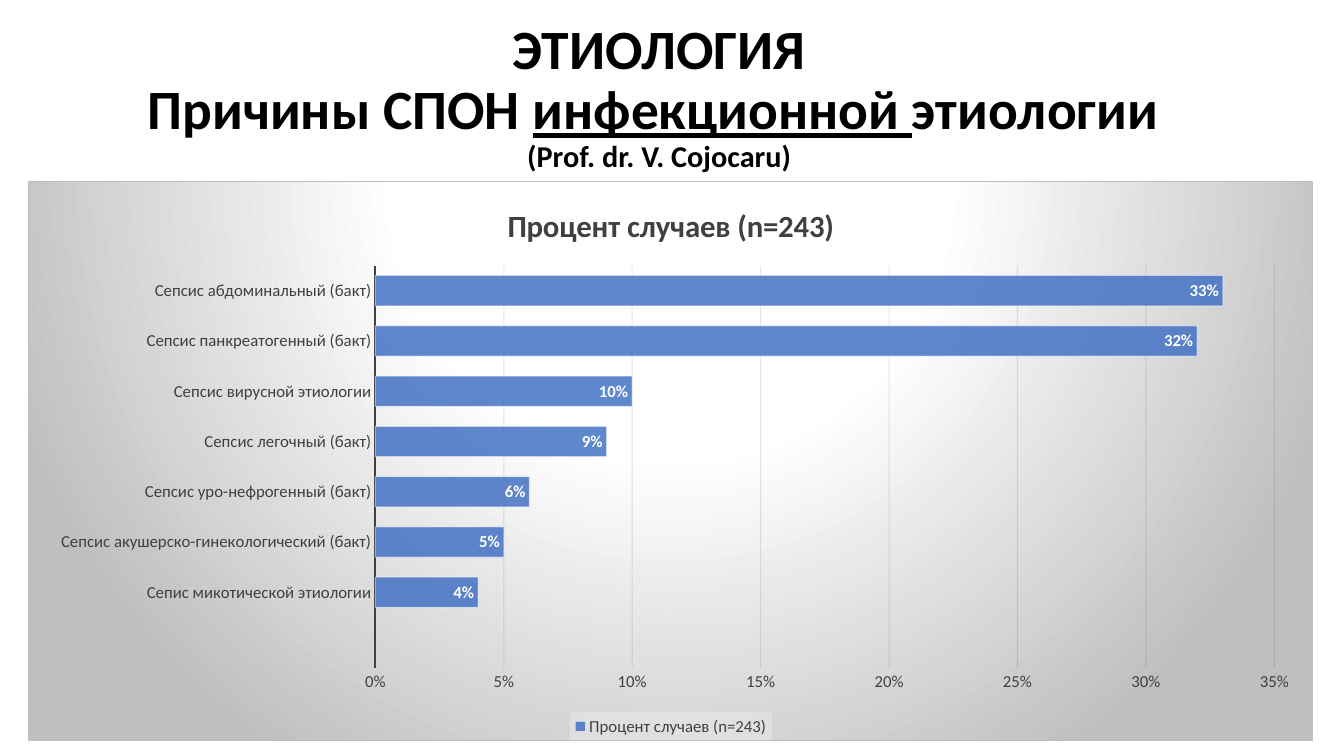
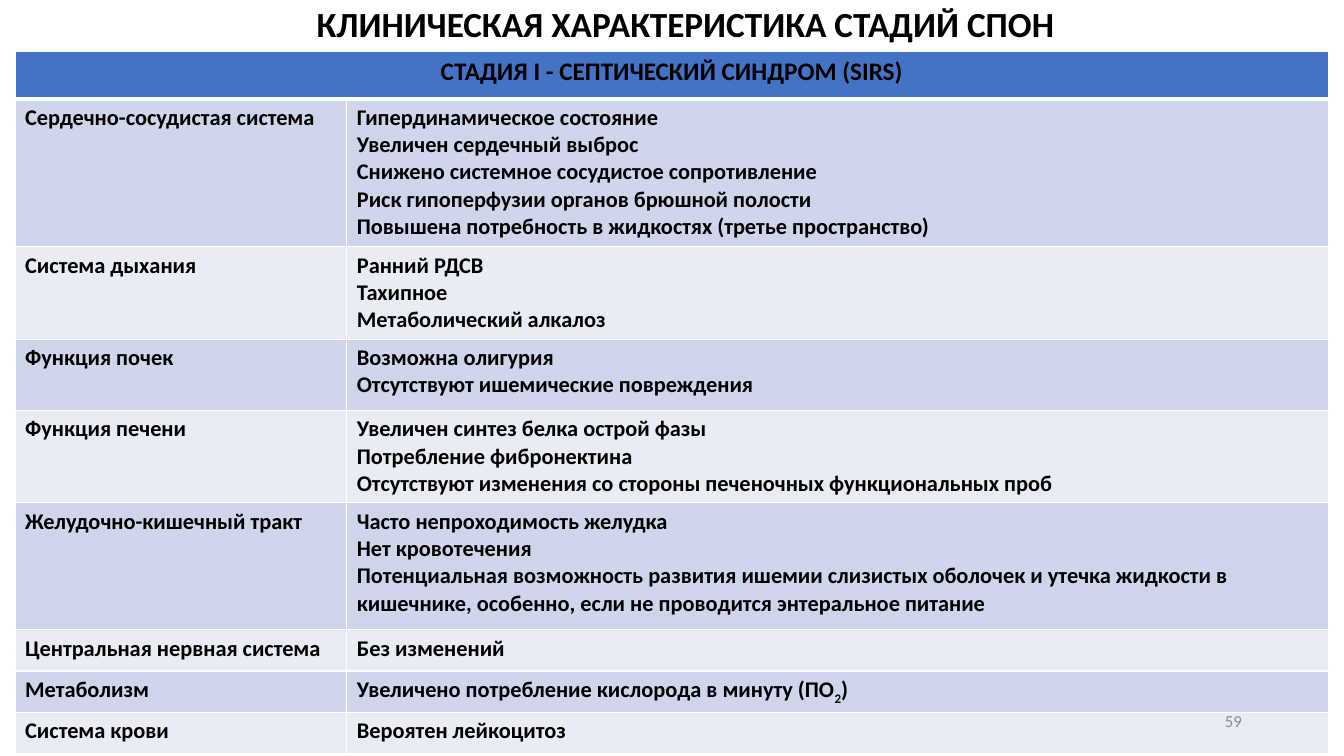
from dataclasses import dataclass

from pptx import Presentation
from pptx import oxml
from pptx.chart.data import CategoryChartData
from pptx.dml.color import RGBColor
from pptx.enum import chart as ch, text
from pptx.oxml import ns
from pptx.util import Cm, Pt


@dataclass(frozen=True)
class Theme:
    font: str = "Calibri"
    black: str = "000000"
    white: str = "FFFFFF"
    blue: str = "4472C4"
    bands: tuple = ("CFD5EA", "E9EBF5")
    grey: str = "BFBFBF"
    dark: str = "404040"
    grid: str = "0D0D0D"
    legend: str = "F2F2F2"
    number: str = "8C8C8C"
    title: float = 39.6
    author: float = 21.6
    small_title: float = 25.2
    chart_title: float = 22
    header: float = 18
    body: float = 16
    label: float = 12


T = Theme()

CAUSES_TITLE = [
    [("ЭТИОЛОГИЯ", {})],
    [("Причины СПОН ", {}), ("инфекционной ", {"underline": True}), ("этиологии ", {})],
    [("(Prof. dr. V. Cojocaru)", {"size": T.author})],
]
SERIES = "Процент случаев (n=243)"
CAUSES = [
    ("", None),
    ("Сепис микотической этиологии", 0.04),
    ("Сепсис акушерско-гинекологический (бакт)", 0.05),
    ("Сепсис уро-нефрогенный (бакт)", 0.06),
    ("Сепсис легочный (бакт)", 0.09),
    ("Сепсис вирусной этиологии", 0.1),
    ("Сепсис панкреатогенный (бакт)", 0.32),
    ("Сепсис абдоминальный (бакт)", 0.33),
]

STAGE_TITLE = [[("КЛИНИЧЕСКАЯ ХАРАКТЕРИСТИКА СТАДИЙ СПОН", {})]]
STAGE = "СТАДИЯ I - СЕПТИЧЕСКИЙ СИНДРОМ (SIRS)"
HEADER_HEIGHT = 1.19
COLUMNS = (8.36, 24.74)
SYSTEMS = [
    ("Сердечно-сосудистая система", 3.73, [
        "Гипердинамическое состояние",
        "Увеличен сердечный выброс",
        "Снижено системное сосудистое сопротивление",
        "Риск гипоперфузии органов брюшной полости",
        "Повышена потребность в жидкостях (третье пространство)"]),
    ("Система дыхания", 1.8, ["Ранний РДСВ", "Тахипное", "Метаболический алкалоз"]),
    ("Функция почек", 1.8, ["Возможна олигурия", "Отсутствуют ишемические повреждения"]),
    ("Функция печени", 2.29, [
        "Увеличен синтез белка острой фазы",
        "Потребление фибронектина",
        "Отсутствуют изменения со стороны печеночных функциональных проб"]),
    ("Желудочно-кишечный тракт", 3.2, [
        "Часто непроходимость желудка",
        "Нет кровотечения",
        "Потенциальная возможность развития ишемии слизистых оболочек и утечка жидкости "
        "в кишечнике, особенно, если не проводится энтеральное питание"]),
    ("Центральная нервная система", 1.04, ["Без изменений"]),
    ("Метаболизм", 1.04, [[
        ("Увеличено потребление кислорода в минуту (ПО", {}),
        ("2", {"baseline": -25000}), (")", {})]]),
    ("Система крови", 1.04, ["Вероятен лейкоцитоз"]),
]
PAGE = "59"


def rgb(color):
    return RGBColor.from_string(color)


def xml(body):
    return oxml.parse_xml(body.replace(">", f' {ns.nsdecls("a", "c")}>', 1))


def style(font, size, color=T.black, bold=False, underline=None):
    font.name, font.size, font.bold = T.font, Pt(size), bold
    font.color.rgb = rgb(color)
    if underline:
        font.underline = True


def write(p, content, align=None, baseline=None, **fmt):
    if align is not None:
        p.alignment = align
    if not isinstance(content, str):
        for part, extra in content:
            write(p, part, **{**fmt, **extra})
        return
    r = p.add_run()
    r.text = content
    style(r.font, **fmt)
    if baseline:
        r._r.get_or_add_rPr().set("baseline", str(baseline))


def add_titled_slide(prs, lines, size, box):
    s = prs.slides.add_slide(prs.slide_layouts[5])
    sp = s.shapes.title
    sp.left, sp.top, sp.width, sp.height = map(Cm, box)
    tf = sp.text_frame
    tf.auto_size = text.MSO_AUTO_SIZE.NONE
    tf.vertical_anchor = text.MSO_ANCHOR.MIDDLE
    p = tf.paragraphs[0]
    p.line_spacing = 0.9
    for i, line in enumerate(lines):
        if i:
            p.add_line_break()
        write(p, line, align=text.PP_ALIGN.CENTER, size=size, bold=True)
    return s


def set_alpha(element, query, percent):
    for color in element.xpath(query):
        color.append(xml(f'<a:alpha val="{percent * 1000}"></a:alpha>'))


def paint_backdrop(chart):
    stops = "".join(
        f'<a:gs pos="{pos * 1000}"><a:srgbClr val="{color}"/></a:gs>'
        for pos, color in ((0, T.white), (39, T.white), (100, T.grey)))
    chart._chartSpace.find(ns.qn("c:chart")).addnext(xml(
        f'<c:spPr><a:gradFill><a:gsLst>{stops}</a:gsLst><a:path path="circle">'
        '<a:fillToRect l="50000" t="-80000" r="50000" b="180000"/></a:path></a:gradFill>'
        f'<a:ln w="9525"><a:solidFill><a:srgbClr val="{T.grey}"/></a:solidFill></a:ln></c:spPr>'))


def place_plot(chart, x, y, w, h):
    plot = chart._chartSpace.xpath("c:chart/c:plotArea")[0]
    for old in plot.xpath("c:layout"):
        plot.remove(old)
    sizes = "".join(f'<c:{k} val="{v}"/>' for k, v in zip("xywh", (x, y, w, h)))
    plot.insert(0, xml(
        '<c:layout><c:manualLayout><c:layoutTarget val="inner"/><c:xMode val="edge"/>'
        f'<c:yMode val="edge"/>{sizes}</c:manualLayout></c:layout>'))


def format_axes(chart):
    cat, val = chart.category_axis, chart.value_axis
    for axis in (cat, val):
        axis.major_tick_mark = axis.minor_tick_mark = ch.XL_TICK_MARK.NONE
        style(axis.tick_labels.font, T.label, T.dark)
    cat.has_major_gridlines = False
    cat.format.line.color.rgb = rgb(T.dark)
    cat.format.line.width = Pt(1.5)
    val.minimum_scale, val.maximum_scale, val.major_unit = 0, 0.35, 0.05
    val.tick_labels.number_format = "0%"
    val.tick_labels.number_format_is_linked = False
    val.format.line.fill.background()
    val.has_major_gridlines = True
    grid = val.major_gridlines.format.line
    grid.color.rgb, grid.width = rgb(T.grid), Pt(0.75)
    set_alpha(val._element, "c:majorGridlines//a:srgbClr", 10)


def format_bars(chart):
    plot = chart.plots[0]
    plot.gap_width = 65
    plot.vary_by_categories = False
    bars = plot.series[0]
    bars.format.fill.solid()
    bars.format.fill.fore_color.rgb = rgb(T.blue)
    bars.format.line.color.rgb = rgb(T.white)
    bars.format.line.width = Pt(0.75)
    set_alpha(bars._element, "c:spPr/a:solidFill/a:srgbClr", 85)
    set_alpha(bars._element, "c:spPr/a:ln//a:srgbClr", 50)
    labels = bars.data_labels
    labels.show_value = True
    labels.position = ch.XL_LABEL_POSITION.INSIDE_END
    labels.number_format, labels.number_format_is_linked = "0%", False
    style(labels.font, T.label, T.white, True)


def format_legend(chart):
    chart.has_legend = True
    legend = chart.legend
    legend.position = ch.XL_LEGEND_POSITION.BOTTOM
    legend.include_in_layout = False
    style(legend.font, T.label, T.dark)
    legend._element.find(ns.qn("c:txPr")).addprevious(xml(
        f'<c:spPr><a:solidFill><a:srgbClr val="{T.legend}"><a:alpha val="39000"/>'
        '</a:srgbClr></a:solidFill></c:spPr>'))


def add_causes_chart(s):
    data = CategoryChartData(number_format="0%")
    data.categories = [name for name, _ in CAUSES]
    data.add_series(SERIES, [share for _, share in CAUSES])
    box = map(Cm, (0.71, 4.57, 32.39, 14.1))
    chart = s.shapes.add_chart(ch.XL_CHART_TYPE.BAR_CLUSTERED, *box, data).chart
    style(chart.font, 10)
    chart.has_title = True
    write(chart.chart_title.text_frame.paragraphs[0], SERIES,
          size=T.chart_title, color=T.dark, bold=True)
    chart.chart_title.include_in_layout = False
    format_axes(chart)
    format_bars(chart)
    format_legend(chart)
    place_plot(chart, 0.27, 0.15, 0.7, 0.72)
    paint_backdrop(chart)


def fill_cell(cell, lines, fill, bottom=1, **fmt):
    cell.fill.solid()
    cell.fill.fore_color.rgb = rgb(fill)
    tcPr = cell._tc.get_or_add_tcPr()
    for i, (side, width) in enumerate(zip("LRTB", (1, 1, 1, bottom))):
        tcPr.insert(i, xml(
            f'<a:ln{side} w="{width * 12700}"><a:solidFill><a:srgbClr val="{T.white}"/>'
            f'</a:solidFill></a:ln{side}>'))
    tf = cell.text_frame
    for i, line in enumerate(lines):
        write(tf.add_paragraph() if i else tf.paragraphs[0], line, bold=True, **fmt)


def add_stage_table(s):
    heights = [HEADER_HEIGHT] + [height for _, height, _ in SYSTEMS]
    box = map(Cm, (0.38, 1.3, sum(COLUMNS), sum(heights)))
    table = s.shapes.add_table(len(heights), len(COLUMNS), *box).table
    for column, width in zip(table.columns, COLUMNS):
        column.width = Cm(width)
    for row, height in zip(table.rows, heights):
        row.height = Cm(height)
    table.cell(0, 0).merge(table.cell(0, 1))
    for col, lines in enumerate(([STAGE], [])):
        fill_cell(table.cell(0, col), lines, T.blue, bottom=3,
                  size=T.header, align=text.PP_ALIGN.CENTER)
    for i, (system, _, signs) in enumerate(SYSTEMS):
        for col, lines in enumerate(([system], signs)):
            fill_cell(table.cell(i + 1, col), lines, T.bands[i % 2], size=T.body)


def add_page_number(s):
    tf = s.shapes.add_textbox(*map(Cm, (23.93, 17.65, 7.62, 1.02))).text_frame
    tf.word_wrap = True
    tf.vertical_anchor = text.MSO_ANCHOR.MIDDLE
    write(tf.paragraphs[0], PAGE, align=text.PP_ALIGN.RIGHT, size=T.label, color=T.number)


def main():
    prs = Presentation()
    prs.slide_width, prs.slide_height = Cm(33.87), Cm(19.05)
    s = add_titled_slide(prs, CAUSES_TITLE, T.title, (1.17, 0.38, 30.89, 4.19))
    add_causes_chart(s)
    s = add_titled_slide(prs, STAGE_TITLE, T.small_title, (1.19, 0, 32.18, 1.3))
    add_stage_table(s)
    add_page_number(s)
    prs.save("out.pptx")


if __name__ == "__main__":
    main()
